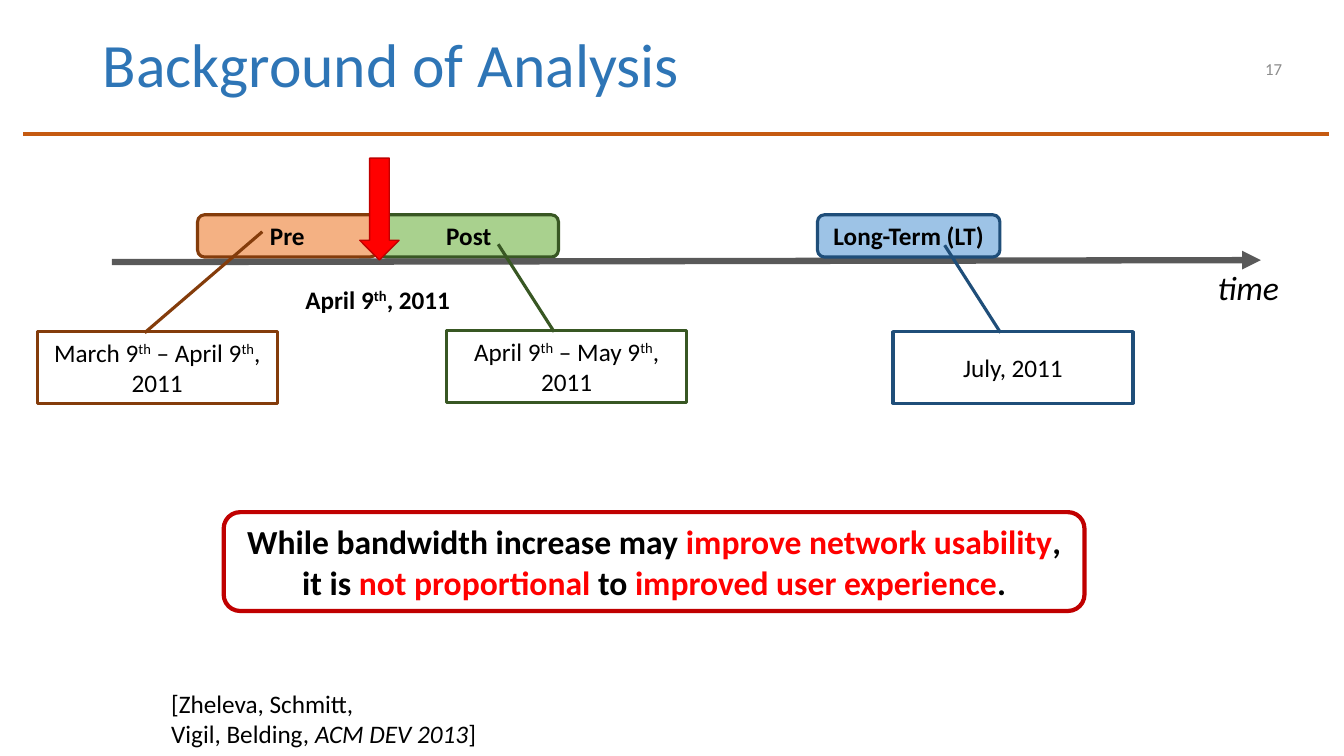
from dataclasses import dataclass

from lxml import etree
from pptx import Presentation
from pptx.dml.color import RGBColor
from pptx.enum.shapes import MSO_CONNECTOR, MSO_SHAPE
from pptx.enum.text import MSO_ANCHOR, MSO_AUTO_SIZE, PP_ALIGN
from pptx.oxml.ns import qn
from pptx.util import Pt

STRAIGHT = MSO_CONNECTOR.STRAIGHT
ROUNDED = MSO_SHAPE.ROUNDED_RECTANGLE
DOWN_ARROW = MSO_SHAPE.DOWN_ARROW
CALLOUT = MSO_SHAPE.LINE_CALLOUT_1
LEFT, CENTER, RIGHT = PP_ALIGN.LEFT, PP_ALIGN.CENTER, PP_ALIGN.RIGHT
TOP, MIDDLE = MSO_ANCHOR.TOP, MSO_ANCHOR.MIDDLE
TITLE_ONLY = 5


@dataclass(frozen=True)
class Theme:
    font: str = "Calibri"
    title_size: int = 44
    large: int = 24
    body: int = 18
    small: int = 12
    title: str = "2E75B6"
    rule: str = "C55A11"
    text: str = "000000"
    muted: str = "8C8C8C"
    axis: str = "595959"
    red: str = "FF0000"
    dark_red: str = "C00000"
    orange: str = "F4B183"
    dark_orange: str = "843C0B"
    green: str = "A9D18E"
    dark_green: str = "385723"
    blue: str = "9DC3E6"
    dark_blue: str = "1F4E79"


THEME = Theme()


def rgb(color):
    return RGBColor.from_string(color)


def write(frame, paragraphs, size=THEME.body, color=THEME.text, bold=False,
          align=LEFT, anchor=MIDDLE):
    """Each paragraph is a list of (text, mark); marks: "", "sup", "red", "italic"."""
    frame.vertical_anchor = anchor
    for index, pieces in enumerate(paragraphs):
        para = frame.add_paragraph() if index else frame.paragraphs[0]
        para.alignment = align
        for text, mark in pieces:
            span = para.add_run()
            span.text = text
            span.font.name = THEME.font
            span.font.size = Pt(size)
            span.font.bold = bold
            span.font.italic = mark == "italic"
            span.font.color.rgb = rgb(THEME.red if mark == "red" else color)
            if mark == "sup":
                span.font._element.set("baseline", "30000")


def add_title(page, text):
    title = page.shapes.title
    title.left, title.top, title.width, title.height = Pt(66.2), Pt(-3.6), Pt(828), Pt(104.4)
    write(title.text_frame, [[(text, "")]], THEME.title_size, THEME.title)
    title.text_frame.auto_size = MSO_AUTO_SIZE.NONE
    title.text_frame.paragraphs[0].line_spacing = 0.9


def add_line(page, start, end, color, width, arrow=False):
    line = page.shapes.add_connector(STRAIGHT, *map(Pt, start + end))
    line.line.color.rgb = rgb(color)
    line.line.width = Pt(width)
    if arrow:
        etree.SubElement(line.line._get_or_add_ln(), qn("a:tailEnd"), type="triangle")
    etree.SubElement(line._element.spPr, qn("a:effectLst"))


def add_box(page, kind, place, outline, width, fill=None, paragraphs=(), **style):
    box = page.shapes.add_shape(kind, *map(Pt, place))
    box.shadow.inherit = False
    if fill:
        box.fill.solid()
        box.fill.fore_color.rgb = rgb(fill)
    else:
        box.fill.background()
    box.line.color.rgb = rgb(outline)
    box.line.width = Pt(width)
    write(box.text_frame, paragraphs, align=CENTER, **style)
    return box


def add_period(page, name, left, width, fill, outline):
    add_box(page, ROUNDED, (left, 153.4, width, 30.2), outline, 2.25, fill,
            [[(name, "")]], bold=True)


def add_callout(page, left, top, outline, pieces, tip):
    callout = add_box(page, CALLOUT, (left, top, 171.4, 51.1), outline, 2.25,
                      paragraphs=[pieces])
    for index, value in enumerate((0.015, 0.448) + tip):
        callout.adjustments[index] = value


def add_label(page, place, paragraphs, wrap=False, anchor=TOP, **style):
    label = page.shapes.add_textbox(*map(Pt, place))
    label.text_frame.word_wrap = wrap
    write(label.text_frame, paragraphs, anchor=anchor, **style)


def main():
    deck = Presentation()
    deck.slide_width, deck.slide_height = Pt(960), Pt(540)
    page = deck.slides.add_slide(deck.slide_layouts[TITLE_ONLY])

    # Heading
    add_line(page, (16.6, 95.8), (949, 95.8), THEME.rule, 3)
    add_title(page, "Background of Analysis")
    add_label(page, (707, 34.6, 216, 28.8), [[("17", "")]], wrap=True, anchor=MIDDLE,
              size=THEME.small, color=THEME.muted, align=RIGHT)

    # Timeline with its periods
    add_period(page, "Post", 270.7, 128.2, THEME.green, THEME.dark_green)
    add_period(page, "Pre", 141.1, 128.2, THEME.orange, THEME.dark_orange)
    add_line(page, (79.9, 187.2), (900.7, 185.8), THEME.axis, 4.5, arrow=True)
    add_period(page, "Long-Term (LT)", 583.9, 130.3, THEME.blue, THEME.dark_blue)
    add_label(page, (862.6, 187.2, 59, 36), [[("time", "italic")]], size=THEME.large)

    # Moment of the upgrade
    add_box(page, DOWN_ARROW, (257, 113, 28.1, 72.7), THEME.dark_red, 1, THEME.red)
    add_label(page, (211, 199.4, 120.2, 28.8),
              [[("April 9", ""), ("th", "sup"), (", 2011", "")]], bold=True)

    # Dates of the periods
    add_callout(page, 26.6, 236.9, THEME.dark_orange,
                [("March 9", ""), ("th", "sup"), (" – April 9", ""), ("th", "sup"),
                 (", 2011", "")], (-1.397, 0.938))
    add_callout(page, 319, 236.2, THEME.dark_green,
                [("April 9", ""), ("th", "sup"), (" – May 9", ""), ("th", "sup"),
                 (", 2011", "")], (-1.208, 0.215))
    add_callout(page, 637.9, 236.9, THEME.dark_blue, [("July, 2011", "")], (-1.208, 0.215))

    # Conclusion and citation
    add_box(page, ROUNDED, (159.8, 365.8, 614.9, 70.6), THEME.dark_red, 3, paragraphs=[
        [("While bandwidth increase may ", ""), ("improve network usability", "red"),
         (",", "")],
        [("it is ", ""), ("not proportional", "red"), (" to ", ""),
         ("improved user experience", "red"), (".", "")],
    ], size=THEME.large, bold=True)
    add_label(page, (115.2, 488.2, 234.7, 51.1), [
        [("[Zheleva, Schmitt,", "")],
        [("Vigil, Belding, ", ""), ("ACM DEV 2013", "italic"), ("]", "")],
    ])

    deck.save("out.pptx")


if __name__ == "__main__":
    main()
